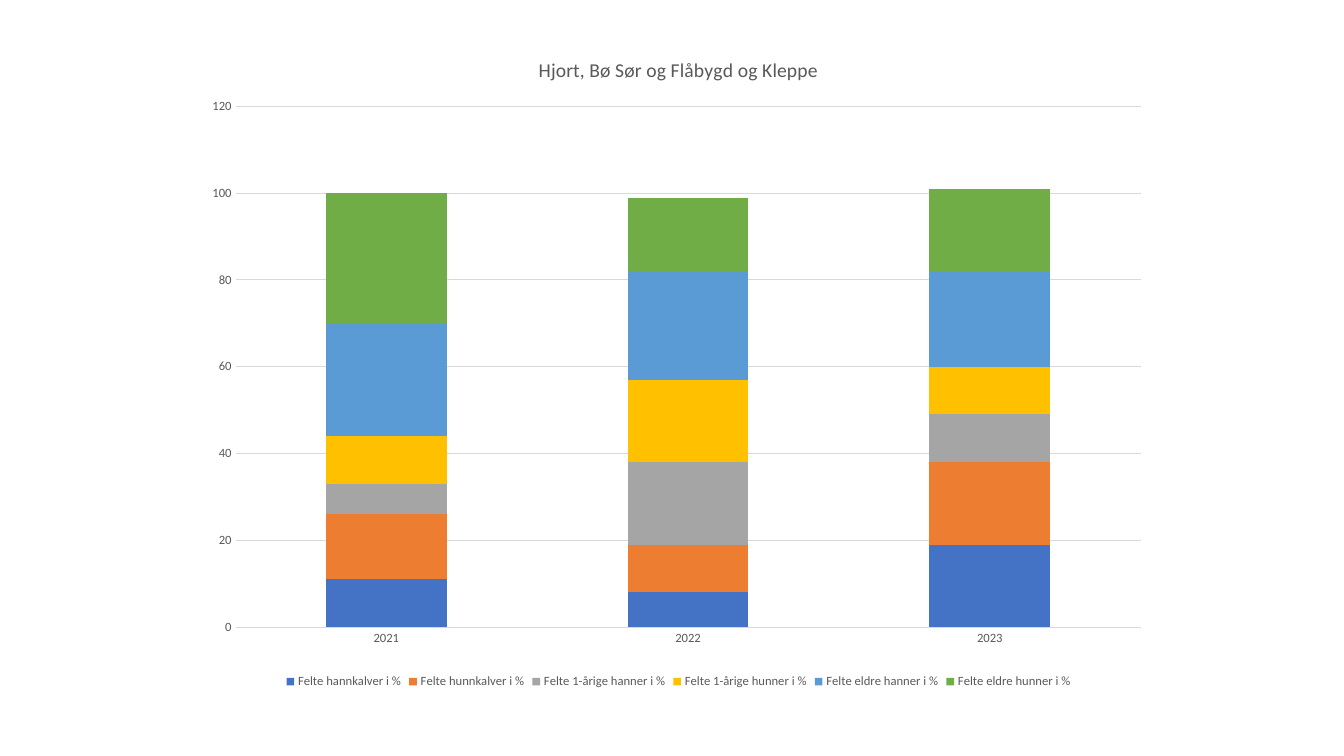
from pptx import Presentation
from pptx.chart.data import CategoryChartData
from pptx.dml.color import RGBColor
from pptx.enum.chart import XL_CHART_TYPE, XL_LEGEND_POSITION, XL_TICK_MARK
from pptx.oxml import parse_xml
from pptx.oxml.ns import nsdecls, qn
from pptx.util import Emu, Pt

STACKED = XL_CHART_TYPE.COLUMN_STACKED
BOTTOM = XL_LEGEND_POSITION.BOTTOM
NO_TICK = XL_TICK_MARK.NONE

BLACK = RGBColor(0x00, 0x00, 0x00)
TEXT = RGBColor(0x59, 0x59, 0x59)
GRID = RGBColor(0xD9, 0xD9, 0xD9)
BLUE = RGBColor(0x44, 0x72, 0xC4)
ORANGE = RGBColor(0xED, 0x7D, 0x31)
GREY = RGBColor(0xA5, 0xA5, 0xA5)
YELLOW = RGBColor(0xFF, 0xC0, 0x00)
SKY = RGBColor(0x5B, 0x9B, 0xD5)
GREEN = RGBColor(0x70, 0xAD, 0x47)

EMU_PER_PX = 914400 / 100.8
TITLE = "Hjort, Bø Sør og Flåbygd og Kleppe"
YEARS = ["2021", "2022", "2023"]
SERIES = [
    ("Felte hannkalver i %", (11, 8, 19), BLUE),
    ("Felte hunnkalver i %", (15, 11, 19), ORANGE),
    ("Felte 1-årige hanner i %", (7, 19, 11), GREY),
    ("Felte 1-årige hunner i %", (11, 19, 11), YELLOW),
    ("Felte eldre hanner i %", (26, 25, 22), SKY),
    ("Felte eldre hunner i %", (30, 17, 19), GREEN),
]


def px(n):
    return Emu(round(n * EMU_PER_PX))


class SlideBuilder:
    """Holds the text style and the current slide."""

    def __init__(self, slide, font="Calibri"):
        self.slide = slide
        self.font = font

    def style(self, font, size, color=TEXT):
        font.name = self.font
        font.size = Pt(size)
        font.bold = False
        font.color.rgb = color

    def title(self, chart, text):
        chart.has_title = True
        p = chart.chart_title.text_frame.paragraphs[0]
        r = p.add_run()
        r.text = text
        self.style(r.font, 14)
        chart.chart_title.include_in_layout = False

    def axis(self, axis):
        axis.major_tick_mark = axis.minor_tick_mark = NO_TICK
        self.style(axis.tick_labels.font, 9)

    def grey_line(self, line):
        line.color.rgb = GRID
        line.width = Pt(0.75)

    def legend(self, chart):
        chart.has_legend = True
        chart.legend.position = BOTTOM
        chart.legend.include_in_layout = False
        self.style(chart.legend.font, 9)

    def plot_area(self, chart, x, y, w, h):
        """Fix the inner plot area, in fractions of the chart."""
        area = chart.element.find(".//" + qn("c:plotArea"))
        for old in area.findall(qn("c:layout")):
            area.remove(old)
        sizes = "".join(f'<c:{tag} val="{val}"/>' for tag, val in
                        (("x", x), ("y", y), ("w", w), ("h", h)))
        area.insert(0, parse_xml(
            f'<c:layout {nsdecls("c")}><c:manualLayout>'
            '<c:layoutTarget val="inner"/>'
            '<c:xMode val="edge"/><c:yMode val="edge"/>'
            f'{sizes}</c:manualLayout></c:layout>'))

    def stacked_chart(self, x, y, w, h, title, categories, series):
        data = CategoryChartData()
        data.categories = categories
        for name, values, _ in series:
            data.add_series(name, values)
        chart = self.slide.shapes.add_chart(
            STACKED, px(x), px(y), px(w), px(h), data).chart
        self.style(chart.font, 10, BLACK)
        self.title(chart, title)
        self.legend(chart)

        # Columns
        plot = chart.plots[0]
        plot.gap_width = 150
        plot.overlap = 100
        plot.vary_by_categories = False
        for s, (_, _, color) in zip(plot.series, series):
            s.format.fill.solid()
            s.format.fill.fore_color.rgb = color

        # Axes and gridlines
        self.axis(chart.category_axis)
        self.grey_line(chart.category_axis.format.line)
        values = chart.value_axis
        self.axis(values)
        values.minimum_scale, values.maximum_scale = 0, 120
        values.major_unit = 20
        values.format.line.fill.background()
        values.has_major_gridlines = True
        self.grey_line(values.major_gridlines.format.line)
        return chart


def main():
    prs = Presentation()
    prs.slide_width, prs.slide_height = px(1344), px(756)
    builder = SlideBuilder(prs.slides.add_slide(prs.slide_layouts[6]))

    # Share of felled deer by age and sex
    chart = builder.stacked_chart(197, 34, 963, 659, TITLE, YEARS, SERIES)
    builder.plot_area(chart, 0.04, 0.11, 0.94, 0.79)

    prs.save("out.pptx")


if __name__ == "__main__":
    main()
